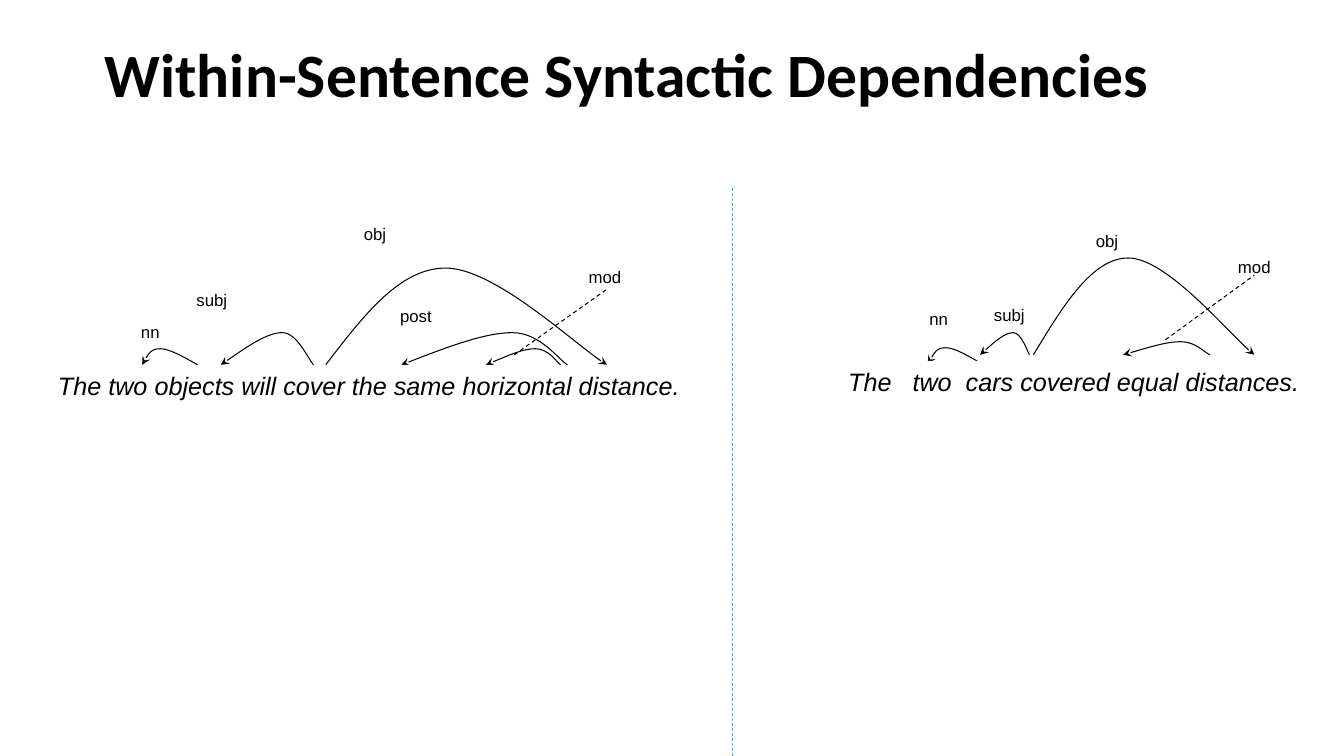
import pptx
import pptx.util
import pptx.dml.color
import pptx.enum.dml
import pptx.enum.shapes
import pptx.enum.text
import pptx.oxml.ns
from lxml import etree

Inches, Pt = pptx.util.Inches, pptx.util.Pt
RGBColor = pptx.dml.color.RGBColor
Align, Anchor = pptx.enum.text.PP_ALIGN, pptx.enum.text.MSO_ANCHOR
qn = pptx.oxml.ns.qn

BLACK = RGBColor(0x00, 0x00, 0x00)
WHITE = RGBColor(0xFF, 0xFF, 0xFF)
BLUE = RGBColor(0x5B, 0x9B, 0xD5)

# Content
TITLE = "Within-Sentence Syntactic Dependencies"
TITLE_BOX = (0.94, 0.04, 11.5, 1.45)
SPLIT = (7.26, 1.87, 7.26, 7.5)

# Labels: text and box. Arcs run from head word to dependent:
# x of the seven curve points, then y of start, first bend, top, last bend, end.
PARTS = [
    {
        "labels": [
            ("obj", (3.51, 2.17, 0.74, 0.48)),
            ("nn", (1.3, 3.14, 0.55, 0.38)),
            ("subj", (1.85, 2.82, 0.74, 0.48)),
            ("mod", (5.74, 2.6, 0.74, 0.32)),
            ("post", (3.87, 2.98, 0.74, 0.48)),
        ],
        "arcs": [
            ((1.96, 1.82, 1.68, 1.59, 1.5, 1.45, 1.41), (3.62, 3.54, 3.46, 3.54, 3.62)),
            ((3.11, 3.06, 2.95, 2.8, 2.65, 2.42, 2.19), (3.62, 3.57, 3.3, 3.46, 3.62)),
            ((3.23, 3.6, 3.96, 4.42, 4.89, 5.75, 6.02), (3.62, 3.14, 2.66, 3.46, 3.62)),
            ((5.56, 5.52, 5.44, 5.31, 5.19, 5.01, 4.82), (3.62, 3.59, 3.46, 3.54, 3.62)),
            ((5.63, 5.54, 5.36, 5.08, 4.81, 4.39, 3.98), (3.62, 3.57, 3.3, 3.46, 3.62)),
        ],
        "words": ("The two objects will cover the same horizontal distance.",
                  (0.16, 3.62, 7, 0.48)),
        "dash": (5.1, 3.52, 6.02, 2.87),
    },
    {
        "labels": [
            ("obj", (10.77, 2.24, 0.71, 0.48)),
            ("nn", (9.12, 3.01, 0.53, 0.38)),
            ("subj", (9.76, 2.97, 0.71, 0.48)),
            ("mod", (12.18, 2.5, 0.71, 0.32)),
        ],
        "arcs": [
            ((9.74, 9.6, 9.47, 9.38, 9.29, 9.25, 9.2), (3.61, 3.53, 3.45, 3.53, 3.61)),
            ((10.21, 10.19, 10.13, 10.05, 9.97, 9.84, 9.72), (3.52, 3.49, 3.3, 3.41, 3.52)),
            ((10.25, 10.54, 10.83, 11.19, 11.56, 12.23, 12.44), (3.52, 3.04, 2.56, 3.36, 3.52)),
            ((12, 11.95, 11.86, 11.71, 11.57, 11.35, 11.14), (3.52, 3.5, 3.39, 3.46, 3.52)),
        ],
        "words": ("The   two  cars covered equal distances.",
                  (8.02, 3.58, 5.26, 0.48)),
        "dash": (11.56, 3.37, 12.44, 2.73),
    },
]


def write(shape, text, size, face="Arial", align=Align.LEFT, anchor=Anchor.TOP,
          bold=False, slant=False):
    frame = shape.text_frame
    frame.word_wrap = True
    frame.vertical_anchor = anchor
    para = frame.paragraphs[0]
    para.text = text
    para.alignment = align
    font = para.runs[0].font
    font.name, font.size, font.bold, font.italic = face, Pt(size), bold, slant
    font.color.rgb = BLACK
    return para


def add_box(shapes, text, box, size, **style):
    rect = shapes.add_shape(pptx.enum.shapes.MSO_SHAPE.RECTANGLE, *map(Inches, box))
    rect.shadow.inherit = False
    rect.fill.solid()
    rect.fill.fore_color.rgb = WHITE
    rect.line.fill.background()
    write(rect, text, size, **style)


def add_dash(shapes, ends, color, width):
    line = shapes.add_connector(pptx.enum.shapes.MSO_CONNECTOR.STRAIGHT, *map(Inches, ends))
    line.line.color.rgb = color
    line.line.width = Pt(width)
    line.line.dash_style = pptx.enum.dml.MSO_LINE.DASH
    etree.SubElement(line.element.spPr, qn("a:effectLst"))


def add_arc(shapes, xs, ys):
    start, rise, top, fall, end = ys
    heights = (start, rise, top, top, top, fall, end)
    dots = [(Inches(x), Inches(y)) for x, y in zip(xs, heights)]
    pen = shapes.build_freeform(*dots[0], scale=1.0)
    pen.add_line_segments(dots[1:], close=False)
    arc = pen.convert_to_shape()
    arc.shadow.inherit = False
    arc.fill.background()
    arc.line.color.rgb = BLACK
    arc.line.width = Pt(0.75)

    # Every three straight steps become one cubic curve
    track = arc.element.find(".//" + qn("a:path"))
    steps = track.findall(qn("a:lnTo"))
    for i in range(0, len(steps), 3):
        curve = etree.SubElement(track, qn("a:cubicBezTo"))
        for step in steps[i:i + 3]:
            curve.append(step[0])
            track.remove(step)
    line = arc.element.spPr.find(qn("a:ln"))
    etree.SubElement(line, qn("a:tailEnd"), type="stealth")


def main():
    deck = pptx.Presentation()
    deck.slide_width, deck.slide_height = Inches(13.33), Inches(7.5)
    slide = deck.slides.add_slide(deck.slide_layouts[6])

    # Title
    title = slide.shapes.add_textbox(*map(Inches, TITLE_BOX))
    para = write(title, TITLE, 44, face="Calibri", anchor=Anchor.MIDDLE, bold=True)
    para.line_spacing = 0.9

    # Two parsed sentences
    for part in PARTS:
        shapes = slide.shapes.add_group_shape().shapes
        for text, box in part["labels"]:
            add_box(shapes, text, box, 12)
        for xs, ys in part["arcs"]:
            add_arc(shapes, xs, ys)
        text, box = part["words"]
        add_box(shapes, text, box, 18, align=Align.CENTER, slant=True)
        add_dash(shapes, part["dash"], BLACK, 0.75)

    # Divider
    add_dash(slide.shapes, SPLIT, BLUE, 0.5)
    deck.save("out.pptx")


if __name__ == "__main__":
    main()
